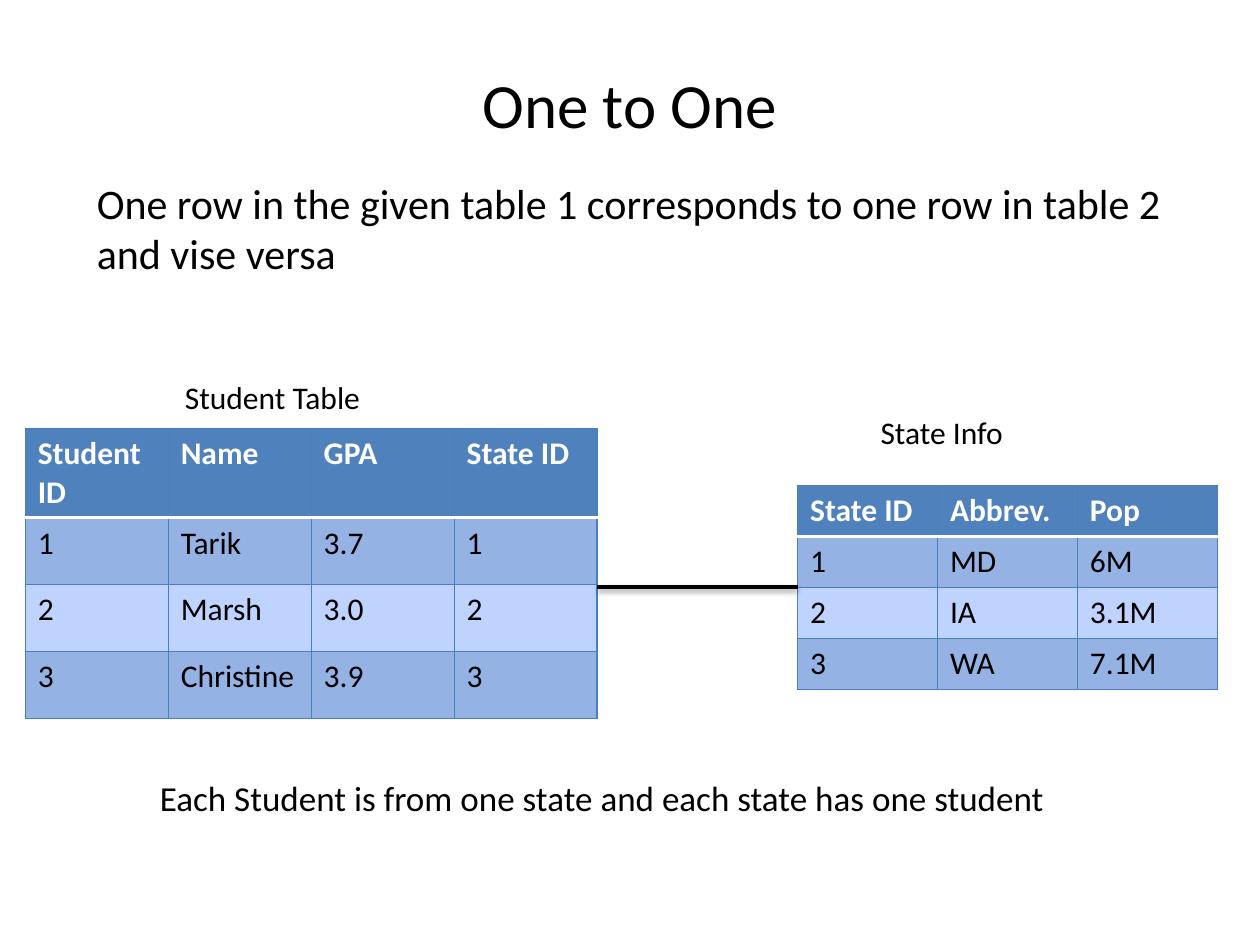
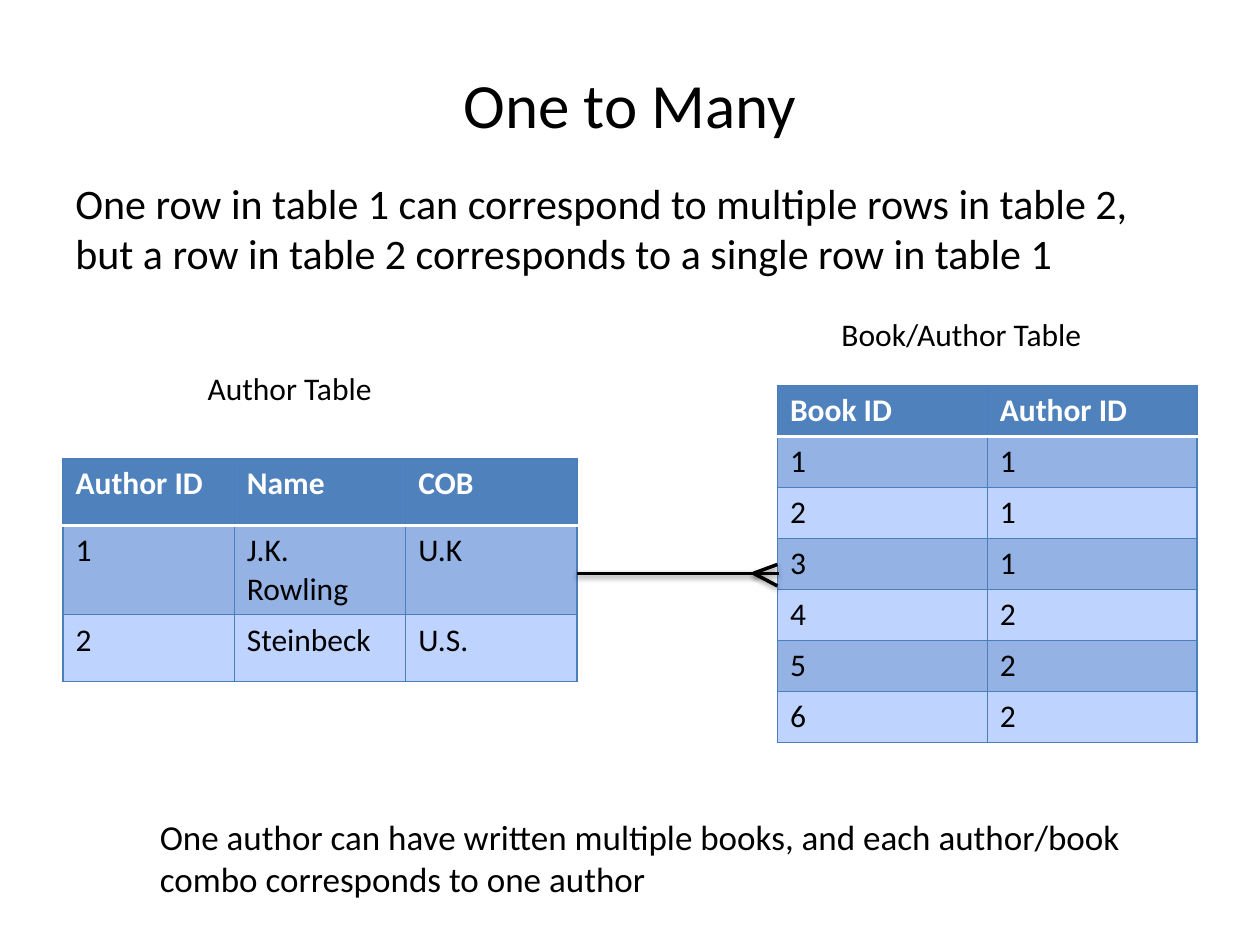
from lxml import etree
from pptx import Presentation
from pptx.dml.color import RGBColor
from pptx.enum.shapes import MSO_CONNECTOR
from pptx.enum.text import MSO_ANCHOR, PP_ALIGN
from pptx.oxml import parse_xml
from pptx.oxml.ns import nsdecls, qn
from pptx.util import Inches, Pt

STRAIGHT = MSO_CONNECTOR.STRAIGHT
LEFT, CENTER = PP_ALIGN.LEFT, PP_ALIGN.CENTER
TOP, MIDDLE = MSO_ANCHOR.TOP, MSO_ANCHOR.MIDDLE

FONT = "Calibri"
BLACK, WHITE = "000000", "FFFFFF"
HEADER, BORDER = "4F81BD", "4B7EBC"
BANDS = ("94B2E4", "BFD3FF")
TITLE_BOX = (0.5, 0.28, 9, 1.08)
TALL, WRAPPED, SHORT = 0.53, 0.71, 0.405

SLIDES = [
    {
        "title": "One to One",
        "intro": ("One row in the given table 1 corresponds to one row in table 2 "
                  "and vise versa", (0.67, 1.36, 9, 1)),
        "caption": ("Each Student is from one state and each state has one student",
                    (1.17, 6.11, 8.5, 0.45)),
        "labels": [("Student Table", (1.37, 2.95, 1.97, 0.4)),
                   ("State Info", (6.89, 3.23, 2.51, 0.4))],
        "tables": [
            ((0.2, 3.4, 4.54), [WRAPPED, TALL, TALL, TALL],
             [("Student ID", "Name", "GPA", "State ID"),
              ("1", "Tarik", "3.7", "1"),
              ("2", "Marsh", "3.0", "2"),
              ("3", "Christine", "3.9", "3")]),
            ((6.33, 3.85, 3.33), [SHORT] * 4,
             [("State ID", "Abbrev.", "Pop"),
              ("1", "MD", "6M"),
              ("2", "IA", "3.1M"),
              ("3", "WA", "7.1M")]),
        ],
        "lines": [(4.74, 4.66, 6.33, 4.66)],
    },
    {
        "title": "One to Many",
        "intro": ("One row in table 1 can correspond to multiple rows in table 2, "
                  "but a row in table 2 corresponds to a single row in table 1",
                  (0.5, 1.36, 9, 1)),
        "caption": ("One author can have written multiple books, and each author/book "
                    "combo corresponds to one author", (1.17, 6.42, 8.5, 0.8)),
        "labels": [("Author Table", (1.55, 2.88, 1.97, 0.4)),
                   ("Book/Author Table", (6.58, 2.45, 2.51, 0.4))],
        "tables": [
            ((0.5, 3.64, 4.08), [TALL, WRAPPED, TALL],
             [("Author ID", "Name", "COB"),
              ("1", "J.K. Rowling", "U.K"),
              ("2", "Steinbeck", "U.S.")]),
            ((6.17, 3.06, 3.33), [SHORT] * 7,
             [("Book ID", "Author ID"), ("1", "1"), ("2", "1"), ("3", "1"),
              ("4", "2"), ("5", "2"), ("6", "2")]),
        ],
        "lines": [(4.58, 4.55, 6.18, 4.55),
                  (5.98, 4.55, 6.17, 4.48),
                  (5.98, 4.55, 6.17, 4.65)],
    },
]


def rgb(color):
    """Turn a hex string into a colour."""
    return RGBColor.from_string(color)


def write(tf, text, size, color=BLACK, bold=False, align=LEFT):
    """Put one formatted run into a text frame."""
    p = tf.paragraphs[0]
    p.alignment = align
    r = p.add_run()
    r.text = text
    for name, value in {"name": FONT, "size": Pt(size), "bold": bold}.items():
        setattr(r.font, name, value)
    r.font.color.rgb = rgb(color)


def add_text(s, box, text, size, align=LEFT, anchor=TOP):
    """Add a wrapping text box."""
    tf = s.shapes.add_textbox(*map(Inches, box)).text_frame
    tf.word_wrap = True
    tf.vertical_anchor = anchor
    write(tf, text, size, align=align)


def set_borders(cell, row):
    """Outline a cell, with a white rule between the header and the body."""
    white_side = {0: "lnB", 1: "lnT"}.get(row)
    tc_pr = cell._tc.get_or_add_tcPr()
    for i, side in enumerate(("lnL", "lnR", "lnT", "lnB")):
        color, width = (WHITE, 2) if side == white_side else (BORDER, 0.75)
        tc_pr.insert(i, parse_xml(
            f'<a:{side} {nsdecls("a")} w="{Pt(width)}"><a:solidFill>'
            f'<a:srgbClr val="{color}"/></a:solidFill></a:{side}>'))


def add_data_table(s, place, heights, rows):
    """Add a banded table with equal columns."""
    left, top, width = place
    cols = len(rows[0])
    table = s.shapes.add_table(
        len(rows), cols, *map(Inches, (left, top, width, sum(heights)))).table
    for col in table.columns:
        col.width = Inches(width / cols)
    for i, (height, values) in enumerate(zip(heights, rows)):
        table.rows[i].height = Inches(height)
        is_header = i == 0
        for j, value in enumerate(values):
            cell = table.cell(i, j)
            cell.fill.solid()
            cell.fill.fore_color.rgb = rgb(HEADER if is_header else BANDS[(i - 1) % 2])
            write(cell.text_frame, value, 18, WHITE if is_header else BLACK, is_header)
            set_borders(cell, i)


def add_relation_line(s, ends):
    """Add a black line with a soft shadow below it."""
    line = s.shapes.add_connector(STRAIGHT, *map(Inches, ends))
    line.line.color.rgb = rgb(BLACK)
    line.line.width = Pt(2)
    effects = etree.SubElement(line._element.spPr, qn("a:effectLst"))
    shadow = etree.SubElement(effects, qn("a:outerShdw"), blurRad=str(Pt(3.1)),
                              dist=str(Pt(1.6)), dir="5400000", rotWithShape="0")
    color = etree.SubElement(shadow, qn("a:srgbClr"), val=BLACK)
    etree.SubElement(color, qn("a:alpha"), val="38000")


def add_relation_slide(prs, content):
    """Build a slide that shows how two tables relate."""
    s = prs.slides.add_slide(prs.slide_layouts[6])
    add_text(s, TITLE_BOX, content["title"], 36, CENTER, MIDDLE)
    for part, size in (("intro", 24), ("caption", 20)):
        text, box = content[part]
        add_text(s, box, text, size)
    for table in content["tables"]:
        add_data_table(s, *table)
    for text, box in content["labels"]:
        add_text(s, box, text, 18)
    for ends in content["lines"]:
        add_relation_line(s, ends)


def main():
    """Build and save the presentation."""
    prs = Presentation()
    prs.slide_width, prs.slide_height = Inches(10), Inches(7.5)
    for content in SLIDES:
        add_relation_slide(prs, content)
    prs.save("out.pptx")


if __name__ == "__main__":
    main()
